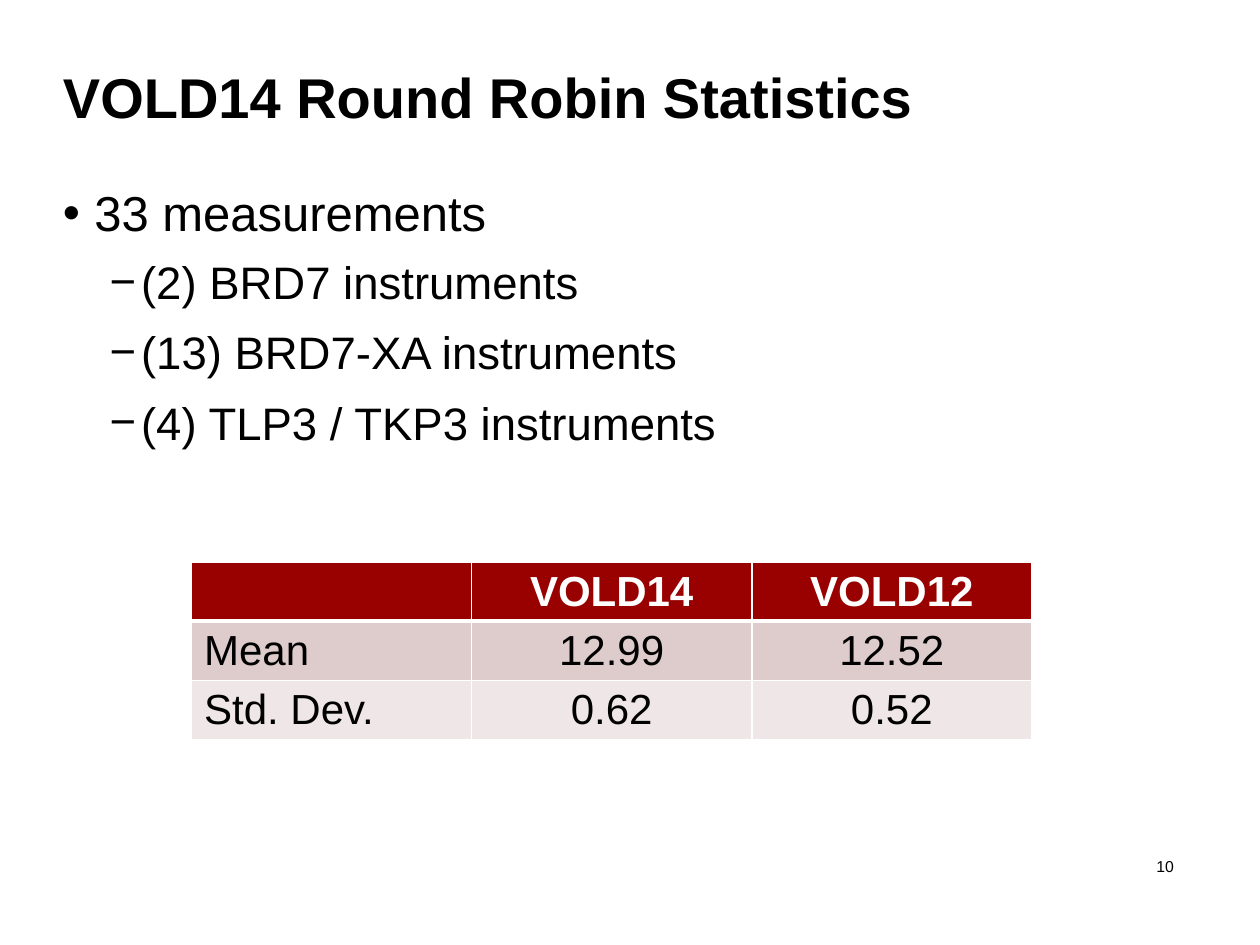
from lxml import etree
from pptx import Presentation
from pptx.dml.color import RGBColor
from pptx.enum.text import MSO_ANCHOR, PP_ALIGN
from pptx.oxml.ns import qn
from pptx.util import Inches, Pt

LEFT, CENTER = PP_ALIGN.LEFT, PP_ALIGN.CENTER
TOP, BOTTOM = MSO_ANCHOR.TOP, MSO_ANCHOR.BOTTOM
COLORS = {"text": "000000", "white": "FFFFFF", "header": "990000",
          "band_dark": "DECCCC", "band_light": "EFE7E7"}
BULLETS = [
    ("33 measurements", 0),
    ("(2) BRD7 instruments", 1),
    ("(13) BRD7-XA instruments", 1),
    ("(4) TLP3 / TKP3 instruments", 1),
]
BULLET_LEVELS = [
    {"size": 28, "bullet": "•", "indent": 0.25, "before": 0, "after": 0},
    {"size": 26, "bullet": "−", "indent": 0.62, "before": 7.2, "after": 1.8},
]
STATISTICS = [
    ["", "VOLD14", "VOLD12"],
    ["Mean", "12.99", "12.52"],
    ["Std. Dev.", "0.62", "0.52"],
]


class SlideBuilder:
    def __init__(self, slide, font_name="Arial"):
        self.slide = slide
        self.font_name = font_name

    def style(self, paragraph, size, color="text", bold=False):
        values = {"name": self.font_name, "size": Pt(size), "bold": bold}
        for name, value in values.items():
            setattr(paragraph.font, name, value)
        paragraph.font.color.rgb = RGBColor.from_string(COLORS[color])

    def frame(self, box, margins=(0, 0, 0, 0), anchor=TOP):
        """Add a wrapping text box; margins run left, top, right, bottom."""
        shape = self.slide.shapes.add_textbox(*map(Inches, box))
        text_frame = shape.text_frame
        left, top, right, bottom = map(Inches, margins)
        values = {"word_wrap": True, "vertical_anchor": anchor,
                  "margin_left": left, "margin_top": top,
                  "margin_right": right, "margin_bottom": bottom}
        for name, value in values.items():
            setattr(text_frame, name, value)
        return text_frame

    def text(self, content, box, size, bold=False, **frame_options):
        paragraph = self.frame(box, **frame_options).paragraphs[0]
        paragraph.text = content
        self.style(paragraph, size, bold=bold)

    def bullets(self, items, box):
        text_frame = self.frame(box)
        for index, (content, level) in enumerate(items):
            paragraph = text_frame.add_paragraph() if index else text_frame.paragraphs[0]
            look = BULLET_LEVELS[level]
            values = {"text": content, "level": level,
                      "space_before": Pt(look["before"]), "space_after": Pt(look["after"])}
            for name, value in values.items():
                setattr(paragraph, name, value)
            properties = paragraph._p.get_or_add_pPr()
            properties.set("marL", str(Inches(look["indent"])))
            properties.set("indent", str(Inches(-0.25)))
            etree.SubElement(properties, qn("a:buFont"), typeface=self.font_name)
            etree.SubElement(properties, qn("a:buChar"), char=look["bullet"])
            self.style(paragraph, look["size"])

    def borders(self, cell, bottom_width):
        """Draw white cell borders; they must come before the fill in the XML."""
        properties = cell._tc.get_or_add_tcPr()
        widths = {"a:lnL": 1, "a:lnR": 1, "a:lnT": 1, "a:lnB": bottom_width}
        for tag, width in widths.items():
            line = etree.SubElement(properties, qn(tag), w=str(Pt(width)))
            fill = etree.SubElement(line, qn("a:solidFill"))
            etree.SubElement(fill, qn("a:srgbClr"), val=COLORS["white"])

    def table(self, rows, box, row_height):
        shape = self.slide.shapes.add_table(len(rows), len(rows[0]), *map(Inches, box))
        fills = ["header", "band_dark", "band_light"]
        for row_index, row in enumerate(rows):
            shape.table.rows[row_index].height = Inches(row_height)
            is_header = row_index == 0
            for column_index, content in enumerate(row):
                cell = shape.table.cell(row_index, column_index)
                self.borders(cell, 3 if is_header else 1)
                cell.margin_bottom = Inches(0.02)
                cell.fill.solid()
                cell.fill.fore_color.rgb = RGBColor.from_string(COLORS[fills[row_index]])
                paragraph = cell.text_frame.paragraphs[0]
                paragraph.text = content
                paragraph.alignment = CENTER if column_index else LEFT
                self.style(paragraph, 24, "white" if is_header else "text", is_header)


def main():
    presentation = Presentation()
    presentation.slide_width, presentation.slide_height = Inches(10), Inches(7.5)
    slide = presentation.slides.add_slide(presentation.slide_layouts[6])
    builder = SlideBuilder(slide)
    builder.text("10", (9.08, 6.75, 0.39, 0.25), 9, margins=(0.1, 0.05, 0.1, 0.05))
    builder.text("VOLD14 Round Robin Statistics", (0.5, 0.49, 9, 0.54), 32,
                 bold=True, anchor=BOTTOM)
    builder.bullets(BULLETS, (0.5, 1.45, 9, 2.55))
    builder.table(STATISTICS, (1.52, 4.46, 6.67, 1.22), row_height=0.41)
    presentation.save("out.pptx")


if __name__ == "__main__":
    main()
